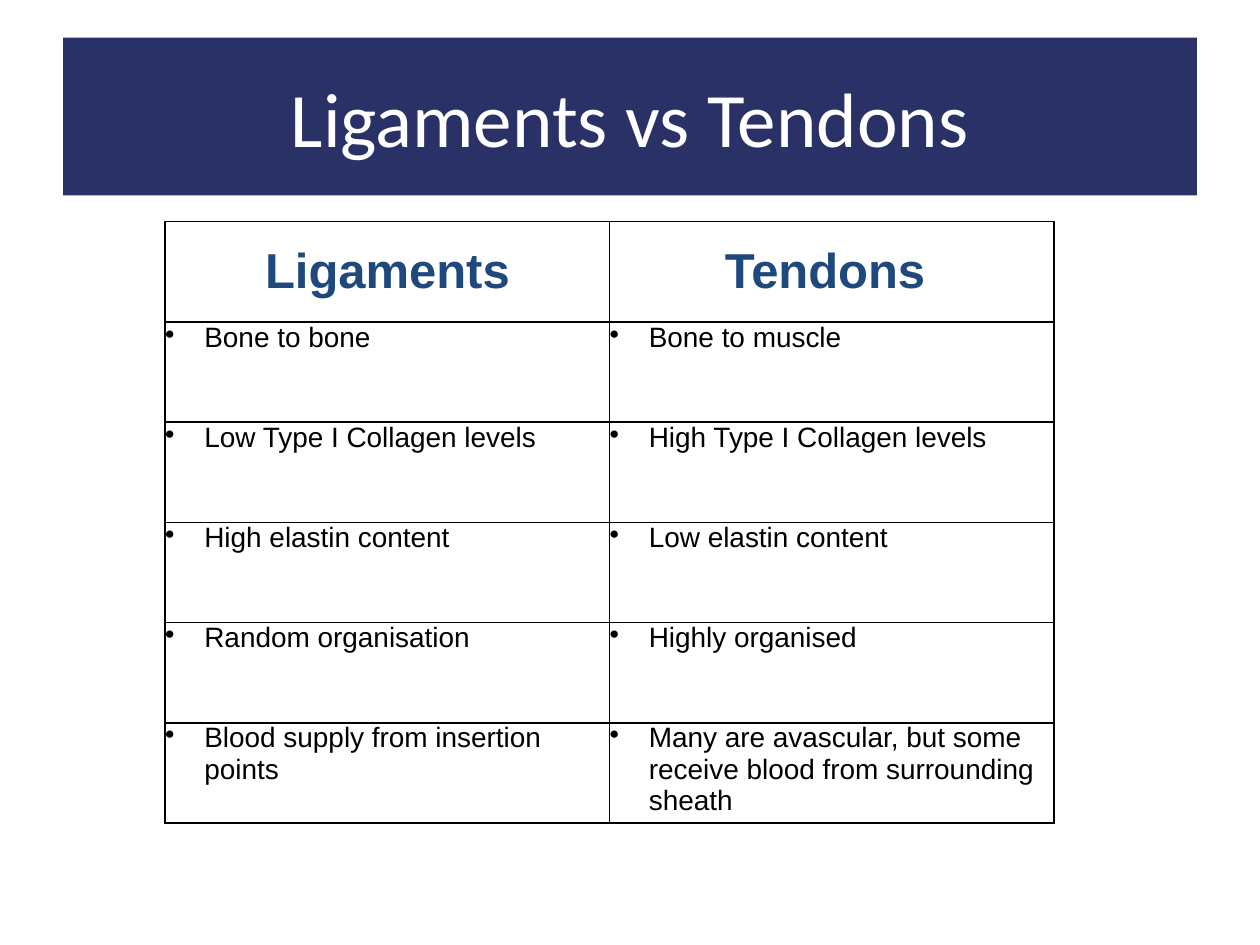
"""Build a slide that compares ligaments and tendons in a two-column table."""
import pptx
import pptx.dml.color
import pptx.enum.text
import pptx.oxml
import pptx.oxml.ns
import pptx.util
from pptx.util import Cm

TITLE = "Ligaments vs Tendons"
ROWS = [
    ("Ligaments", "Tendons "),
    ("Bone to bone", "Bone to muscle"),
    ("Low Type I Collagen levels", "High Type I Collagen levels"),
    ("High elastin content", "Low elastin content"),
    ("Random organisation", "Highly organised"),
    ("Blood supply from insertion points",
     "Many are avascular, but some receive blood from surrounding sheath"),
]

NAVY = pptx.dml.color.RGBColor(0x29, 0x31, 0x67)
BLUE = pptx.dml.color.RGBColor(0x1F, 0x49, 0x7D)
BLACK = pptx.dml.color.RGBColor(0, 0, 0)
WHITE = pptx.dml.color.RGBColor(0xFF, 0xFF, 0xFF)

COLUMN_WIDTH = Cm(8.96)
ROW_HEIGHT = Cm(2.02)
INDENT = Cm(0.79)
BORDER = pptx.util.Pt(1)

ANCHOR = pptx.enum.text.MSO_ANCHOR
ALIGN = pptx.enum.text.PP_ALIGN


def write_text(text_frame, text, *, size, color, font="Arial", bold=False,
               align=ALIGN.LEFT, bullet=False):
    paragraph = text_frame.paragraphs[0]
    paragraph.alignment = align
    run = paragraph.add_run()
    run.text = text
    run.font.name = font
    run.font.size = pptx.util.Pt(size)
    run.font.bold = bold
    run.font.color.rgb = color
    if bullet:
        properties = paragraph._p.get_or_add_pPr()
        properties.set("marL", str(INDENT))
        properties.set("indent", str(-INDENT))
        properties.append(pptx.oxml.parse_xml(
            f'<a:buChar {pptx.oxml.ns.nsdecls("a")} char="•"/>'))


def format_cell(cell, anchor):
    cell.margin_left = cell.margin_right = 0
    cell.margin_top = cell.margin_bottom = 0
    cell.vertical_anchor = anchor
    properties = cell._tc.get_or_add_tcPr()
    for side in ("lnL", "lnR", "lnT", "lnB"):
        properties.append(pptx.oxml.parse_xml(
            f'<a:{side} {pptx.oxml.ns.nsdecls("a")} w="{BORDER}"><a:solidFill>'
            f'<a:srgbClr val="{BLACK}"/></a:solidFill></a:{side}>'))
    cell.fill.solid()
    cell.fill.fore_color.rgb = WHITE


def add_title(slide):
    title = slide.shapes.title
    title.left, title.top, title.width, title.height = (
        Cm(1.27), Cm(0.76), Cm(22.86), Cm(3.18))
    title.fill.solid()
    title.fill.fore_color.rgb = NAVY
    frame = title.text_frame
    frame.vertical_anchor = ANCHOR.MIDDLE
    frame.margin_left = frame.margin_right = Cm(0.25)
    frame.margin_top = frame.margin_bottom = Cm(0.25)
    write_text(frame, TITLE, size=44, color=WHITE, font="Calibri", align=ALIGN.CENTER)


def add_comparison(slide):
    columns = len(ROWS[0])
    table = slide.shapes.add_table(
        len(ROWS), columns, Cm(3.33), Cm(4.47),
        COLUMN_WIDTH * columns, ROW_HEIGHT * len(ROWS)).table
    table.horz_banding = False
    for row_index, row in enumerate(ROWS):
        for column_index, text in enumerate(row):
            cell = table.cell(row_index, column_index)
            if row_index == 0:
                format_cell(cell, ANCHOR.MIDDLE)
                write_text(cell.text_frame, text, size=28, color=BLUE, bold=True,
                           align=ALIGN.CENTER)
            else:
                format_cell(cell, ANCHOR.TOP)
                write_text(cell.text_frame, text, size=16, color=BLACK, bullet=True)


def main():
    presentation = pptx.Presentation()
    presentation.slide_width = Cm(25.4)
    presentation.slide_height = Cm(19.05)
    slide = presentation.slides.add_slide(presentation.slide_layouts[5])
    add_title(slide)
    add_comparison(slide)
    presentation.save("out.pptx")


if __name__ == "__main__":
    main()
